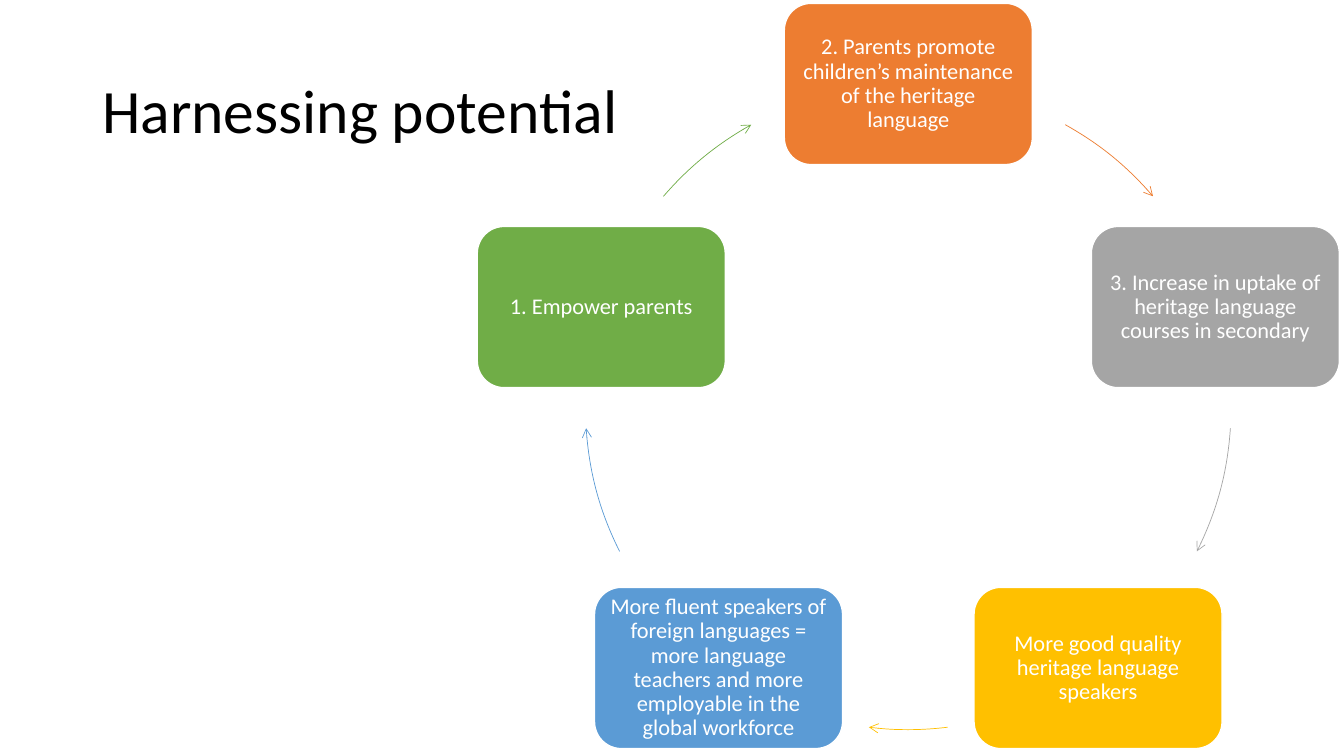
import math
import pptx
import pptx.util
import pptx.dml.color
import pptx.enum.shapes
import pptx.enum.text
from lxml import etree

Pt = pptx.util.Pt
RGB = pptx.dml.color.RGBColor.from_string
Shape = pptx.enum.shapes.MSO_SHAPE
Align = pptx.enum.text.PP_ALIGN
Anchor = pptx.enum.text.MSO_ANCHOR

TITLE = "Harnessing potential"
# Clockwise from the top: text, fill, start and end angle of the arrow after it
STEPS = [
    ("2. Parents promote children’s maintenance of the heritage language",
     "ED7D31", -60.9, -40.7),
    ("3. Increase in uptake of heritage language courses in secondary",
     "A5A5A5", 3.8, 26.6),
    ("More good quality heritage language speakers",
     "FFC000", 83, 97),
    ("More fluent speakers of foreign languages = more language teachers "
     "and more employable in the global workforce",
     "5B9BD5", 153.4, 176.2),
    ("1. Empower parents",
     "70AD47", -139.3, -119.1),
]
THEME = {"font": "Calibri", "dark": "000000", "light": "FFFFFF",
         "title": 44, "body": 16}

SLIDE = (960, 540)
MID_X, MID_Y, RADIUS = 648.8, 290.6, 230.6
BOX_W, BOX_H, INSET = 177.2, 115.2, 5.2


def write(shape, text, size, color, align):
    frame = shape.text_frame
    frame.word_wrap = True
    frame.vertical_anchor = Anchor.MIDDLE
    para = frame.paragraphs[0]
    para.text = text
    para.alignment = align
    para.line_spacing = 0.9
    para.font.name = THEME["font"]
    para.font.size = Pt(size)
    para.font.color.rgb = RGB(color)
    return frame


def add_box(slide, text, color, angle):
    """Place a step on the ring, at an angle clockwise from the right."""
    x = MID_X + RADIUS * math.cos(math.radians(angle))
    y = MID_Y + RADIUS * math.sin(math.radians(angle))
    box = slide.shapes.add_shape(
        Shape.ROUNDED_RECTANGLE, Pt(x - BOX_W / 2), Pt(y - BOX_H / 2),
        Pt(BOX_W), Pt(BOX_H))
    box.shadow.inherit = False
    box.fill.solid()
    box.fill.fore_color.rgb = RGB(color)
    box.line.color.rgb = RGB(THEME["light"])
    box.line.width = Pt(1)
    frame = write(box, text, THEME["body"], THEME["light"], Align.CENTER)
    frame.margin_left = frame.margin_right = Pt(INSET)
    frame.margin_top = frame.margin_bottom = Pt(INSET)


def add_arrow(slide, color, start, end):
    """Draw the part of the ring from start to end, in degrees."""
    arc = slide.shapes.add_shape(
        Shape.ARC, Pt(MID_X - RADIUS), Pt(MID_Y - RADIUS),
        Pt(2 * RADIUS), Pt(2 * RADIUS))
    for i, angle in enumerate((start, end)):
        # Stored in 1/60000 degree, while adjustments count in 1/100000
        arc.adjustments[i] = angle % 360 * 0.6
    arc.shadow.inherit = False
    arc.fill.background()
    arc.line.color.rgb = RGB(color)
    arc.line.width = Pt(0.5)
    line = arc.line._get_or_add_ln()
    etree.SubElement(line, pptx.oxml.ns.qn("a:tailEnd"), type="arrow")


def main():
    deck = pptx.Presentation()
    deck.slide_width, deck.slide_height = map(Pt, SLIDE)
    slide = deck.slides.add_slide(deck.slide_layouts[6])

    title = slide.shapes.add_textbox(Pt(66), Pt(28.8), Pt(828), Pt(104.4))
    write(title, TITLE, THEME["title"], THEME["dark"], Align.LEFT)

    for i, (text, color, start, end) in enumerate(STEPS):
        add_box(slide, text, color, i * 360 / len(STEPS) - 90)
        add_arrow(slide, color, start, end)

    deck.save("out.pptx")


if __name__ == "__main__":
    main()
